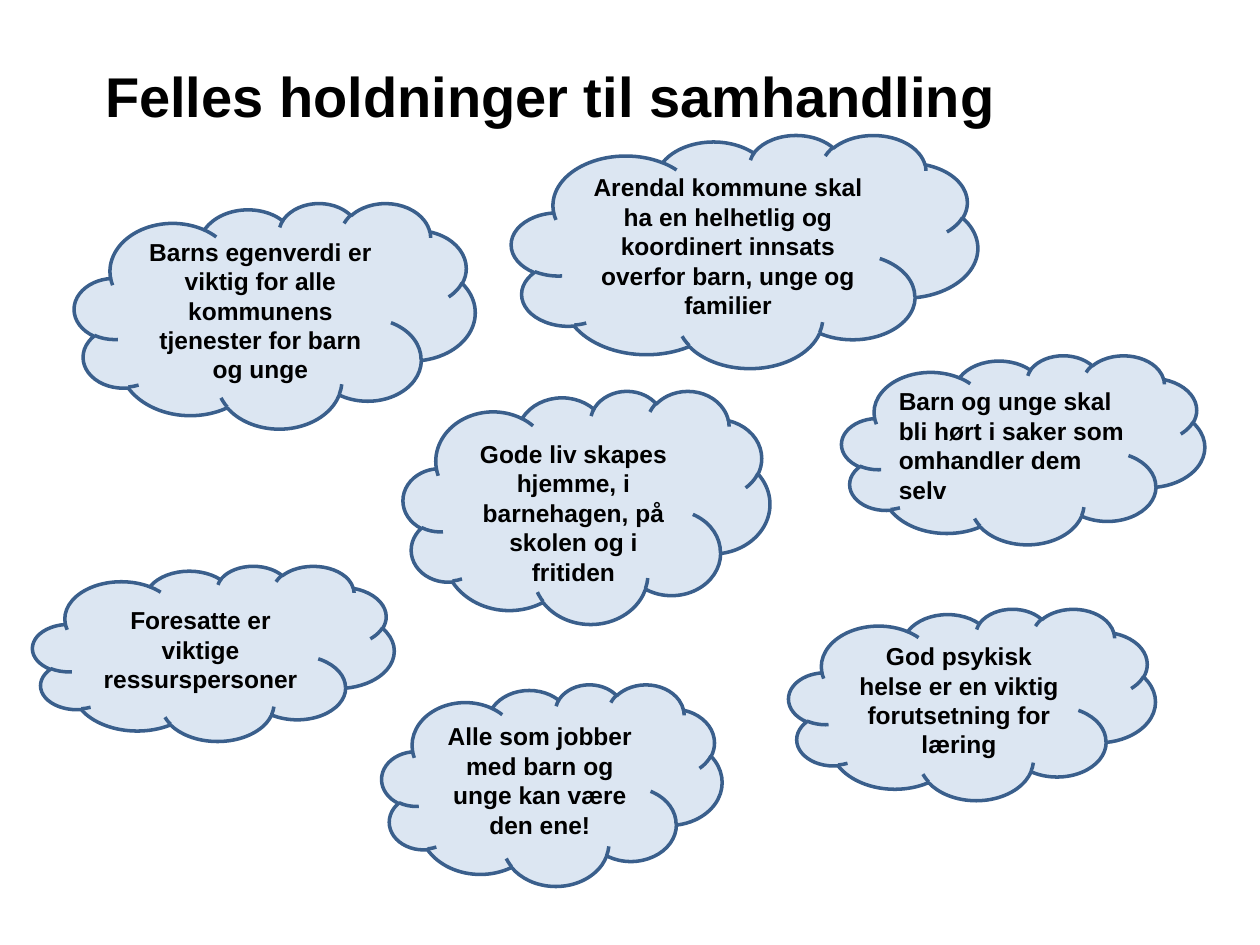
"""Build the slide of shared attitudes to working together."""
from dataclasses import dataclass

from pptx import Presentation
from pptx.dml.color import RGBColor
from pptx.enum.shapes import MSO_SHAPE
from pptx.enum.text import MSO_ANCHOR, PP_ALIGN
from pptx.slide import Slide
from pptx.text.text import TextFrame
from pptx.util import Pt

CLOUD = MSO_SHAPE.CLOUD
MIDDLE = MSO_ANCHOR.MIDDLE
LEFT, CENTER = PP_ALIGN.LEFT, PP_ALIGN.CENTER
COLORS = {"fill": "DCE6F2", "line": "3A5F8C", "text": "000000"}


@dataclass(frozen=True)
class Cloud:
    """A thought cloud, measured in points."""

    text: str
    left: float
    top: float
    width: float
    height: float
    align: PP_ALIGN = CENTER
    inset: float = 3.6
    start: float = 7.2
    end: float = 7.2


CLOUDS = [
    Cloud("Barns egenverdi er viktig for alle kommunens tjenester for barn og unge",
          42.5, 115.9, 229, 128.9),
    Cloud("Barn og unge skal bli hørt i saker som omhandler dem selv",
          481, 203, 207.4, 108, align=LEFT, start=4, end=0),
    Cloud("Arendal kommune skal ha en helhetlig og koordinert innsats "
          "overfor barn, unge og familier", 292.3, 77, 266.4, 133.2),
    Cloud("Foresatte er viktige ressurspersoner", 18.7, 323.3, 206.6, 100.1),
    Cloud("Gode liv skapes hjemme, i barnehagen, på skolen og i fritiden",
          230.4, 223.2, 209.5, 133.2, inset=16),
    Cloud("Alle som jobber med barn og unge kan være den ene!",
          218.2, 391, 194.4, 115.2),
    Cloud("God psykisk helse er en viktig forutsetning for læring",
          450.7, 347.8, 209.5, 109.4),
]


def color(name: str) -> RGBColor:
    """Look up a named colour."""
    return RGBColor.from_string(COLORS[name])


def write(frame: TextFrame, text: str, size: float, align: PP_ALIGN) -> None:
    """Fill a frame with one bold paragraph."""
    frame.word_wrap = True
    para = frame.paragraphs[0]
    para.text = text
    para.alignment = align
    font = para.font
    font.name, font.size, font.bold = "Arial", Pt(size), True
    font.color.rgb = color("text")


def draw_cloud(slide: Slide, cloud: Cloud) -> None:
    """Draw one cloud with its text."""
    shape = slide.shapes.add_shape(
        CLOUD, Pt(cloud.left), Pt(cloud.top), Pt(cloud.width), Pt(cloud.height))
    shape.shadow.inherit = False
    shape.fill.solid()
    shape.fill.fore_color.rgb = color("fill")
    shape.line.color.rgb = color("line")
    shape.line.width = Pt(2)
    frame = shape.text_frame
    frame.vertical_anchor = MIDDLE
    frame.margin_top = Pt(cloud.inset)
    frame.margin_left, frame.margin_right = Pt(cloud.start), Pt(cloud.end)
    write(frame, cloud.text, 14, cloud.align)


def main() -> None:
    """Build and save the slide."""
    deck = Presentation()
    deck.slide_width, deck.slide_height = Pt(720), Pt(540)
    slide = deck.slides.add_slide(deck.slide_layouts[6])
    for cloud in CLOUDS:
        draw_cloud(slide, cloud)
    title = slide.shapes.add_textbox(Pt(42.5), Pt(31.7), Pt(544.3), Pt(46))
    write(title.text_frame, "Felles holdninger til samhandling", 32, CENTER)
    deck.save("out.pptx")


if __name__ == "__main__":
    main()
